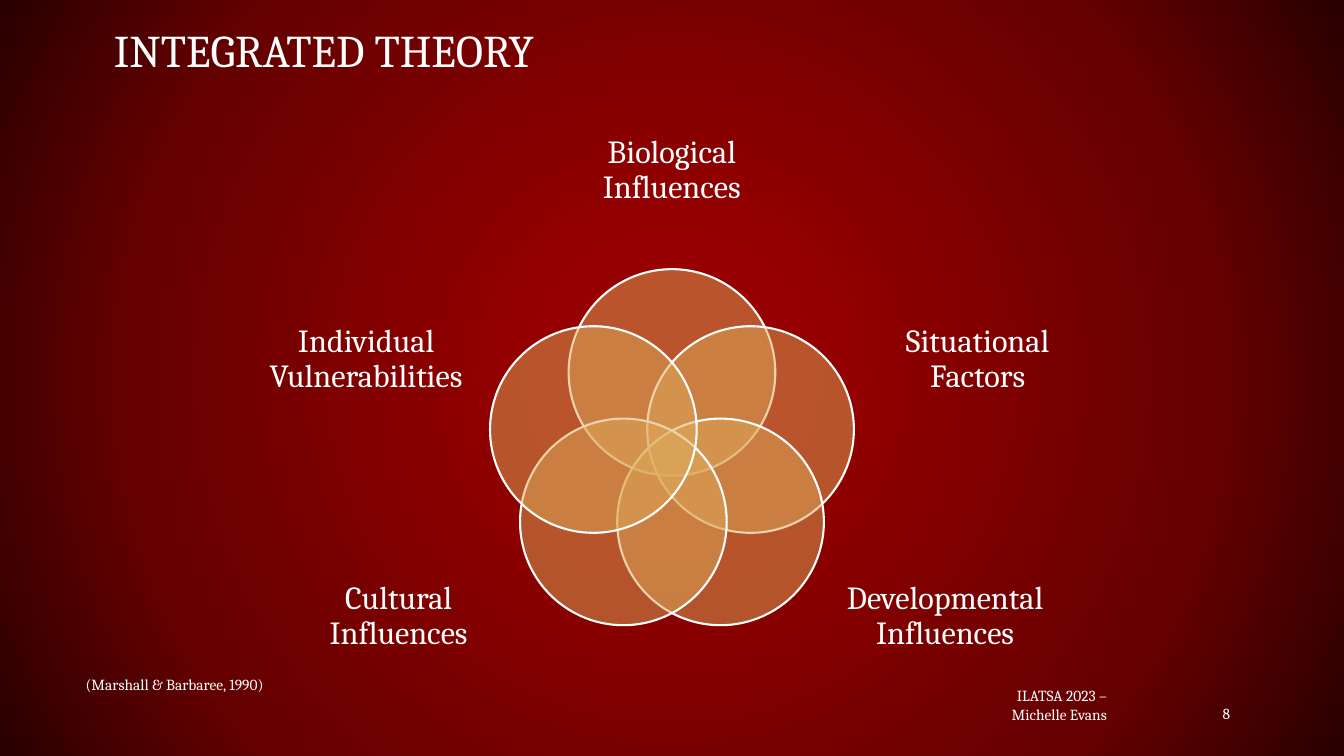
from math import cos, radians, sin

from lxml import etree
from pptx import Presentation
from pptx.dml.color import RGBColor
from pptx.enum.shapes import MSO_SHAPE
from pptx.enum.text import MSO_ANCHOR, PP_ALIGN
from pptx.oxml import parse_xml
from pptx.oxml.ns import qn
from pptx.util import Inches, Pt

LEFT, CENTER, RIGHT = PP_ALIGN.LEFT, PP_ALIGN.CENTER, PP_ALIGN.RIGHT
TOP, MIDDLE, BOTTOM = MSO_ANCHOR.TOP, MSO_ANCHOR.MIDDLE, MSO_ANCHOR.BOTTOM
OVAL = MSO_SHAPE.OVAL
NAMESPACE = "http://schemas.openxmlformats.org/drawingml/2006/main"


def color(hex_string):
    return RGBColor.from_string(hex_string)


class Deck:
    font = "Cambria"
    ink = "FFFFFF"
    petal = "DDA859"
    opacity = 50
    glow = [(17, "960000"), (71, "650000"), (100, "290000")]
    no_inset = (0, 0)
    wide_inset = (0.13, 0.07)
    box_inset = (0.1, 0.05)

    def __init__(self):
        self.file = Presentation()
        self.file.slide_width = Inches(13.33)
        self.file.slide_height = Inches(7.5)
        self.slide = self.file.slides.add_slide(self.file.slide_layouts[6])

    def x(self, percent):
        return round(self.file.slide_width * percent / 100)

    def y(self, percent):
        return round(self.file.slide_height * percent / 100)

    def background(self):
        fill = self.slide.background.fill
        fill.solid()
        stops = "".join(
            f'<a:gs pos="{position * 1000}"><a:srgbClr val="{shade}"/></a:gs>'
            for position, shade in self.glow
        )
        gradient = parse_xml(
            f'<a:gradFill xmlns:a="{NAMESPACE}" rotWithShape="1">'
            f'<a:gsLst>{stops}</a:gsLst><a:path path="circle">'
            '<a:fillToRect l="50000" t="50000" r="50000" b="50000"/>'
            "</a:path></a:gradFill>"
        )
        solid = next(self.slide.element.iter(qn("a:solidFill")))
        solid.getparent().replace(solid, gradient)

    def text(self, words, left, top, width, height, size, align=LEFT,
             anchor=MIDDLE, inset=wide_inset, spacing=1.0):
        box = self.slide.shapes.add_textbox(
            self.x(left), self.y(top), self.x(width), self.y(height))
        frame = box.text_frame
        frame.word_wrap = True
        frame.vertical_anchor = anchor
        frame.margin_left = frame.margin_right = Inches(inset[0])
        frame.margin_top = frame.margin_bottom = Inches(inset[1])
        paragraph = frame.paragraphs[0]
        paragraph.text = words
        paragraph.alignment = align
        paragraph.line_spacing = spacing
        paragraph.font.name = self.font
        paragraph.font.size = Pt(size)
        paragraph.font.color.rgb = color(self.ink)

    def label(self, words, center_x, center_y, width, height):
        self.text(words, center_x - width / 2, center_y - height / 2, width,
                  height, 23, CENTER, inset=self.no_inset, spacing=0.9)

    def circle(self, center_x, center_y, diameter):
        side = self.y(diameter)
        disc = self.slide.shapes.add_shape(
            OVAL, center_x - side // 2, center_y - side // 2, side, side)
        disc.shadow.inherit = False
        disc.fill.solid()
        disc.fill.fore_color.rgb = color(self.petal)
        disc.line.color.rgb = color(self.ink)
        disc.line.width = Pt(1.5)
        shade = disc.element.spPr.find(qn("a:solidFill"))[0]
        etree.SubElement(shade, qn("a:alpha"), val=str(self.opacity * 1000))

    def venn(self, count, center_x, center_y, radius, diameter):
        for index in range(count):
            angle = radians(360 * index / count)
            self.circle(self.x(center_x) + round(self.y(radius) * sin(angle)),
                        self.y(center_y) - round(self.y(radius) * cos(angle)),
                        diameter)


def main():
    deck = Deck()
    deck.background()
    deck.text("INTEGRATED THEORY", 7.5, 4.4, 85, 6.67, 32.4,
              anchor=BOTTOM, spacing=0.8)

    influences = [
        ("Biological Influences", 50, 22.53, 17.85, 18.4),
        ("Situational Factors", 72.75, 47.53, 16, 19.87),
        ("Developmental Influences", 70.33, 81.53, 16, 19.87),
        ("Cultural Influences", 29.67, 81.53, 16, 19.87),
        ("Individual Vulnerabilities", 27.25, 47.53, 16, 19.87),
    ]
    deck.venn(len(influences), 50, 60.2, 10.93, 27.33)
    for influence in influences:
        deck.label(*influence)

    deck.text("(Marshall & Barbaree, 1990)", 5.63, 88.93, 24.38, 3.6, 11,
              anchor=TOP, inset=deck.box_inset, spacing=0.9)
    deck.text("ILATSA 2023 – Michelle Evans", 71.64, 91.8, 11.7, 2.8, 11, RIGHT)
    deck.text("8", 85.67, 92.93, 6.83, 2.8, 11, RIGHT)
    deck.file.save("out.pptx")


if __name__ == "__main__":
    main()
